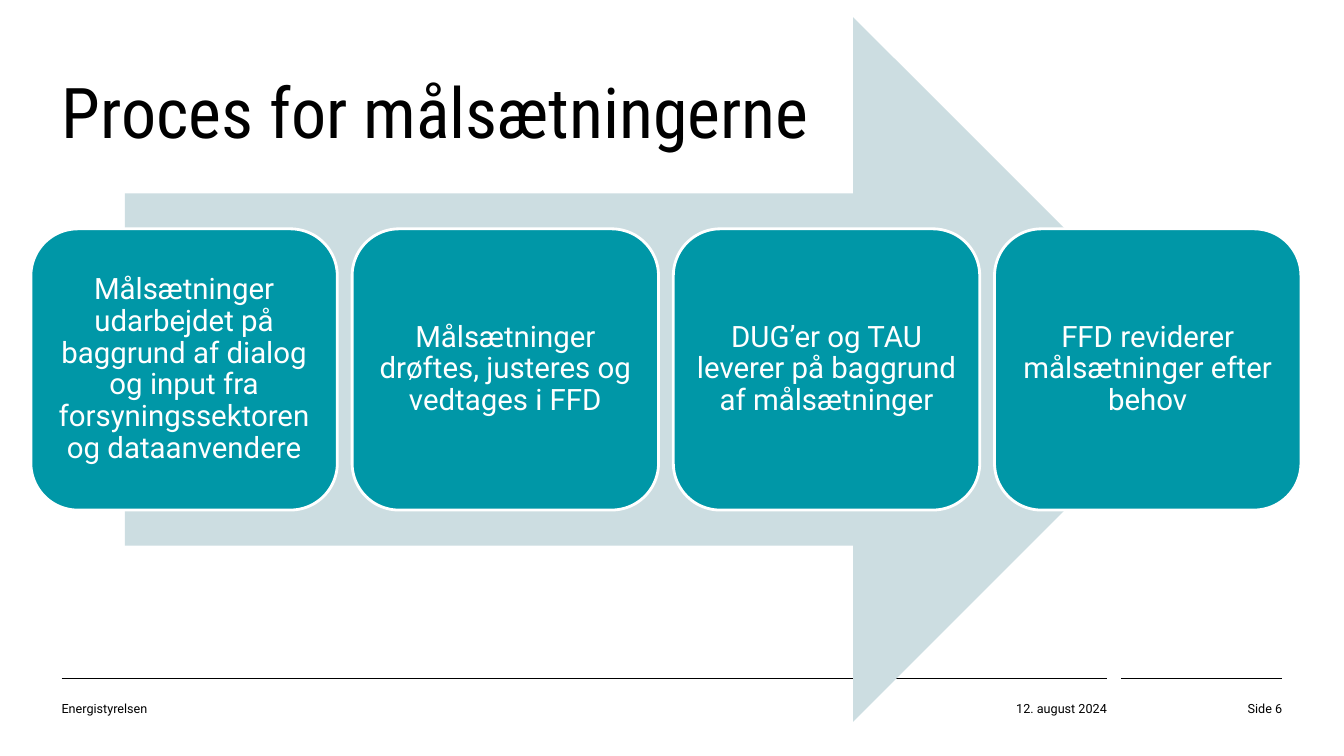
from dataclasses import dataclass

from lxml.etree import SubElement
from pptx import Presentation
from pptx.dml.color import RGBColor
from pptx.enum.shapes import MSO_CONNECTOR, MSO_SHAPE
from pptx.enum.text import MSO_ANCHOR, MSO_AUTO_SIZE, PP_ALIGN
from pptx.oxml.ns import qn
from pptx.util import Inches, Pt


@dataclass(frozen=True)
class Theme:
    """Colours, fonts and type sizes of the slide."""
    ink: RGBColor = RGBColor(0, 0, 0)
    paper: RGBColor = RGBColor(255, 255, 255)
    card: RGBColor = RGBColor(0, 151, 167)
    arrow: RGBColor = RGBColor(204, 221, 225)
    heading_font: str = "Roboto Condensed"
    body_font: str = "Roboto"
    title_size: int = 50
    card_size: int = 21
    footer_size: int = 9


class SlideBuilder:
    """Draws styled elements on a grid of 100 columns and 100 rows."""

    def __init__(self, presentation, theme):
        """Add a title-only slide and measure its grid."""
        self.theme = theme
        self.slide = presentation.slides.add_slide(presentation.slide_layouts[5])
        self.column = presentation.slide_width / 100
        self.row = presentation.slide_height / 100

    def place(self, left, top, width, height):
        """Turn columns and rows into slide lengths."""
        return (round(left * self.column), round(top * self.row),
                round(width * self.column), round(height * self.row))

    def fill_text(self, shape, text, size, color, align=PP_ALIGN.LEFT, font=None,
                  anchor=MSO_ANCHOR.MIDDLE, margins=(0, 0, 0, 0), spacing=1.0):
        """Fill a shape with one formatted paragraph."""
        frame = shape.text_frame
        frame.text = text
        paragraph = frame.paragraphs[0]
        left, top, right, bottom = map(Inches, margins)
        formats = (
            (frame, {"word_wrap": True, "auto_size": MSO_AUTO_SIZE.NONE,
                     "vertical_anchor": anchor, "margin_left": left,
                     "margin_top": top, "margin_right": right,
                     "margin_bottom": bottom}),
            (paragraph, {"alignment": align, "line_spacing": spacing}),
            (paragraph.font, {"name": font or self.theme.body_font, "size": Pt(size)}),
            (paragraph.font.color, {"rgb": color}),
        )
        for target, values in formats:
            for name, value in values.items():
                setattr(target, name, value)

    def title(self, text, *box):
        """Move and format the title placeholder."""
        shape = self.slide.shapes.title
        for name, value in zip(("left", "top", "width", "height"), self.place(*box)):
            setattr(shape, name, value)
        self.fill_text(shape, text, self.theme.title_size, self.theme.ink,
                       font=self.theme.heading_font, anchor=MSO_ANCHOR.BOTTOM,
                       margins=(0, 0.04, 0.09, 0.04))

    def footer(self, text, align, *box):
        """Add a small text at the foot of the slide."""
        shape = self.slide.shapes.add_textbox(*self.place(*box))
        self.fill_text(shape, text, self.theme.footer_size, self.theme.ink, align)

    def rule(self, start, end, row):
        """Draw a thin horizontal line between two columns."""
        left, top, width, _ = self.place(start, row, end - start, 0)
        line = self.slide.shapes.add_connector(
            MSO_CONNECTOR.STRAIGHT, left, top, left + width, top)
        line.line.color.rgb = self.theme.ink
        line.line.width = Pt(0.75)
        SubElement(line._element.spPr, qn("a:effectLst"))

    def preset(self, kind, color, *box):
        """Add a filled preset shape without shadow or outline."""
        shape = self.slide.shapes.add_shape(kind, *self.place(*box))
        shape.shadow.inherit = False
        shape.fill.solid()
        shape.fill.fore_color.rgb = color
        shape.line.fill.background()
        return shape

    def arrow(self, *box):
        """Add the wide process arrow."""
        self.preset(MSO_SHAPE.RIGHT_ARROW, self.theme.arrow, *box)

    def card(self, text, *box):
        """Add a rounded step card with centred text."""
        shape = self.preset(MSO_SHAPE.ROUNDED_RECTANGLE, self.theme.card, *box)
        shape.line.color.rgb = self.theme.paper
        shape.line.width = Pt(2)
        self.fill_text(shape, text, self.theme.card_size, self.theme.paper,
                       PP_ALIGN.CENTER, margins=(0.09,) * 4, spacing=0.9)


STEPS = (
    "Målsætninger udarbejdet på baggrund af dialog og input fra "
    "forsyningssektoren og dataanvendere",
    "Målsætninger drøftes, justeres og vedtages i FFD",
    "DUG’er og TAU leverer på baggrund af målsætninger",
    "FFD reviderer målsætninger efter behov",
)
FIRST_CARD, CARD_PITCH = 2.3, 23.9
LEFT_EDGE, RIGHT_EDGE, DATE_EDGE = 4.58, 95.4, 82.35


def main():
    """Build the process slide and save it."""
    presentation = Presentation()
    presentation.slide_width = Inches(13.33)
    presentation.slide_height = Inches(7.5)
    builder = SlideBuilder(presentation, Theme())
    builder.title("Proces for målsætningerne", LEFT_EDGE, 4, 90.9, 16.67)
    builder.rule(LEFT_EDGE, DATE_EDGE, 89.73)
    builder.rule(83.4, RIGHT_EDGE, 89.73)
    builder.footer("Energistyrelsen", PP_ALIGN.LEFT, LEFT_EDGE, 91.87, 12, 3.73)
    builder.footer("12. august 2024", PP_ALIGN.RIGHT, DATE_EDGE - 13.5, 91.87, 13.5, 3.73)
    builder.footer("Side 6", PP_ALIGN.RIGHT, RIGHT_EDGE - 7.8, 91.87, 7.8, 3.73)
    builder.arrow(9.3, 2.27, 80.4, 93.2)
    for index, step in enumerate(STEPS):
        builder.card(step, FIRST_CARD + index * CARD_PITCH, 30.27, 22.8, 37.2)
    presentation.save("out.pptx")


if __name__ == "__main__":
    main()
